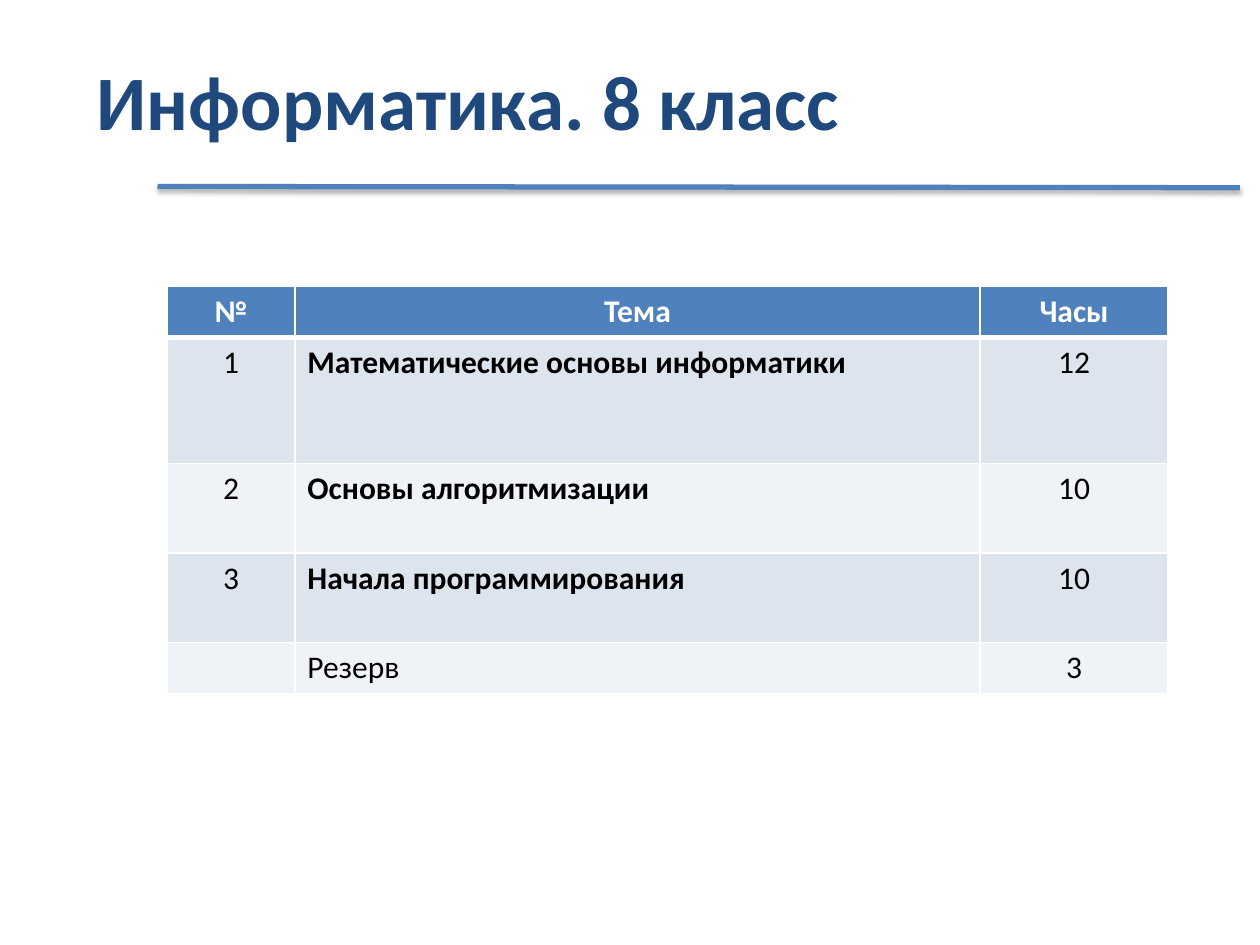
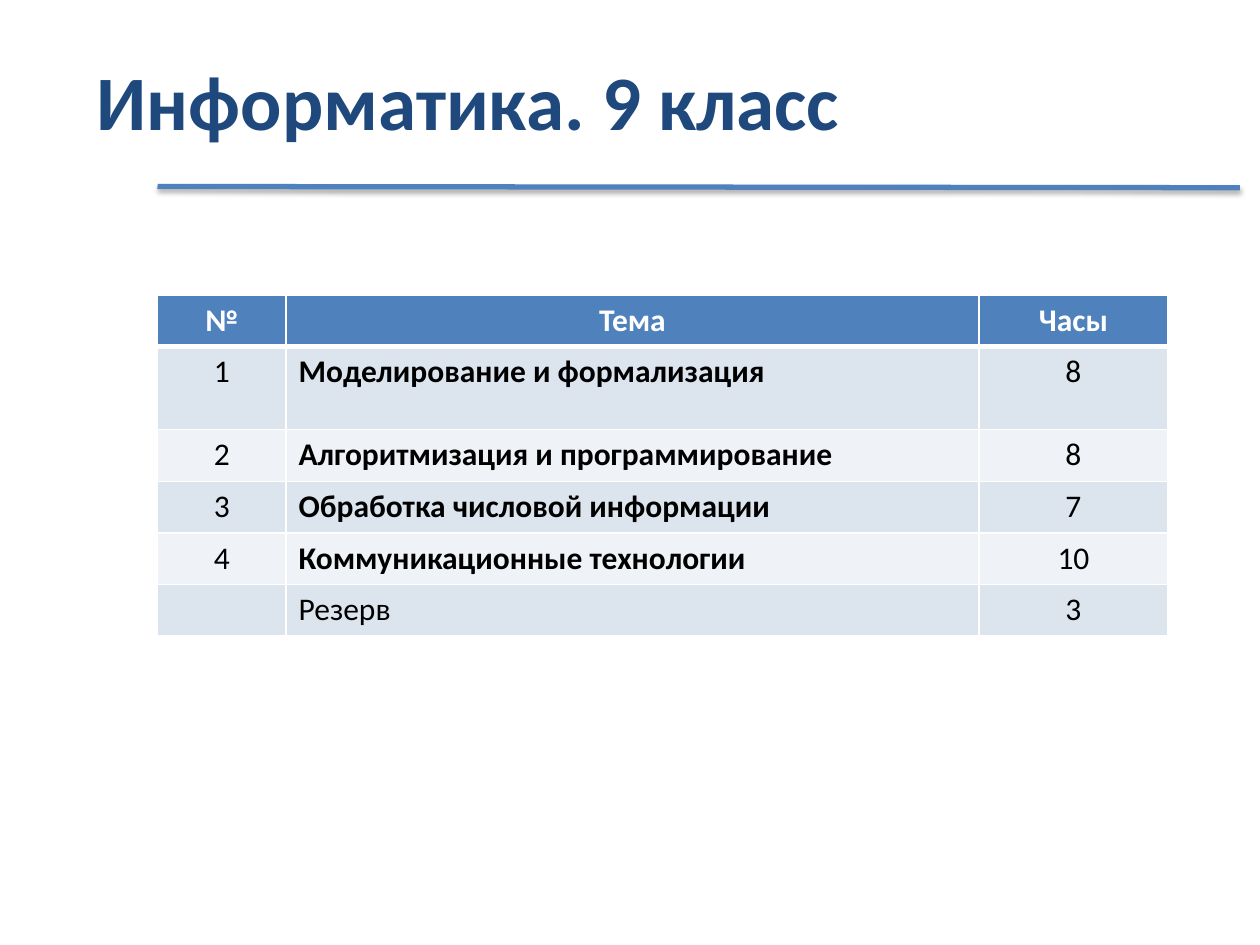
from dataclasses import dataclass

from lxml.etree import SubElement
from pptx import Presentation
from pptx.dml.color import RGBColor
from pptx.enum.shapes import MSO_CONNECTOR as Connector
from pptx.enum.text import MSO_ANCHOR as Anchor, PP_ALIGN as Align
from pptx.oxml import parse_xml
from pptx.oxml.ns import nsdecls, qn
from pptx.slide import Slide
from pptx.table import _Cell as Cell
from pptx.text.text import _Paragraph as Paragraph
from pptx.util import Inches, Pt

FONT = "Calibri"
NAVY, BLUE, BLACK, WHITE = "1F497D", "4F81BD", "000000", "FFFFFF"
BANDS = ("DCE5EE", "EFF3F7")
HEADINGS = ("№", "Тема", "Часы")
RESERVE = "Резерв"
ROW_HEIGHT = 0.41


@dataclass(frozen=True)
class Topic:
    name: str
    hours: int
    height: float = ROW_HEIGHT


@dataclass(frozen=True)
class Course:
    title: str
    left: float
    top: float
    column_widths: tuple[float, ...]
    topics: tuple[Topic, ...]


COURSES = (
    Course("Информатика. 8 класс", 1.33, 2.27, (1.01, 5.44, 1.49), (
        Topic("Математические основы информатики", 12, 1),
        Topic("Основы алгоритмизации", 10, 0.71),
        Topic("Начала программирования", 10, 0.71),
        Topic(RESERVE, 3),
    )),
    Course("Информатика. 9 класс", 1.25, 2.34, (1.02, 5.5, 1.5), (
        Topic("Моделирование и формализация", 8, 0.66),
        Topic("Алгоритмизация и программирование", 8),
        Topic("Обработка числовой информации", 7),
        Topic("Коммуникационные технологии", 10),
        Topic(RESERVE, 3),
    )),
)


def color(value: str) -> RGBColor:
    """Turn a hex string into a colour."""
    return RGBColor.from_string(value)


def write(paragraph: Paragraph, text: str, size: float, ink: str, bold: bool) -> None:
    """Put text with one font into a paragraph."""
    paragraph.text = text
    font = paragraph.font
    font.name, font.size, font.bold = FONT, Pt(size), bold
    font.color.rgb = color(ink)


def add_title(slide: Slide, text: str) -> None:
    """Add the slide title."""
    box = slide.shapes.add_textbox(Inches(0.67), Inches(0.25), Inches(8.92), Inches(1.08))
    frame = box.text_frame
    frame.word_wrap = True
    frame.vertical_anchor = Anchor.MIDDLE
    write(frame.paragraphs[0], text, 44, NAVY, True)


def add_rule(slide: Slide) -> None:
    """Add the shadowed line under the title."""
    rule = slide.shapes.add_connector(
        Connector.STRAIGHT, Inches(1.25), Inches(1.48), Inches(9.84), Inches(1.49))
    rule.line.color.rgb = color(BLUE)
    rule.line.width = Pt(3)
    rule._element.spPr.append(parse_xml(
        f'<a:effectLst {nsdecls("a")}><a:outerShdw blurRad="{Pt(3.1)}" dist="{Pt(1.8)}" '
        f'dir="5400000" rotWithShape="0"><a:srgbClr val="{BLACK}"><a:alpha val="35000"/>'
        '</a:srgbClr></a:outerShdw></a:effectLst>'))


def set_borders(cell: Cell, top: float, bottom: float) -> None:
    """Draw white borders round a cell."""
    properties = cell._tc.get_or_add_tcPr()
    widths = {"a:lnL": 1, "a:lnR": 1, "a:lnT": top, "a:lnB": bottom}
    for index, (tag, width) in enumerate(widths.items()):
        line = SubElement(properties, qn(tag), w=str(Pt(width)))
        SubElement(SubElement(line, qn("a:solidFill")), qn("a:srgbClr"), val=WHITE)
        properties.insert(index, line)


def add_hours_table(slide: Slide, course: Course) -> None:
    """Add the table of topics and hours."""
    rows = [HEADINGS] + [
        ("" if topic.name == RESERVE else str(number), topic.name, str(topic.hours))
        for number, topic in enumerate(course.topics, 1)]
    heights = [ROW_HEIGHT] + [topic.height for topic in course.topics]
    table = slide.shapes.add_table(
        len(rows), len(HEADINGS), Inches(course.left), Inches(course.top),
        Inches(sum(course.column_widths)), Inches(sum(heights))).table
    for column, width in zip(table.columns, course.column_widths):
        column.width = Inches(width)
    for row_index, (texts, height) in enumerate(zip(rows, heights)):
        table.rows[row_index].height = Inches(height)
        header = row_index == 0
        for column_index, text in enumerate(texts):
            cell = table.cell(row_index, column_index)
            is_topic = column_index == 1 and not header
            cell.fill.solid()
            cell.fill.fore_color.rgb = color(BLUE if header else BANDS[(row_index - 1) % 2])
            set_borders(cell, 3 if row_index == 1 else 1, 3 if header else 1)
            paragraph = cell.text_frame.paragraphs[0]
            paragraph.alignment = Align.LEFT if is_topic else Align.CENTER
            write(paragraph, text, 18, WHITE if header else BLACK,
                  header or (is_topic and text != RESERVE))


def main() -> None:
    """Build the presentation with one slide per course."""
    presentation = Presentation()
    presentation.slide_width, presentation.slide_height = Inches(10), Inches(7.5)
    for course in COURSES:
        slide = presentation.slides.add_slide(presentation.slide_layouts[6])
        add_title(slide, course.title)
        add_hours_table(slide, course)
        add_rule(slide)
    presentation.save("out.pptx")


if __name__ == "__main__":
    main()
